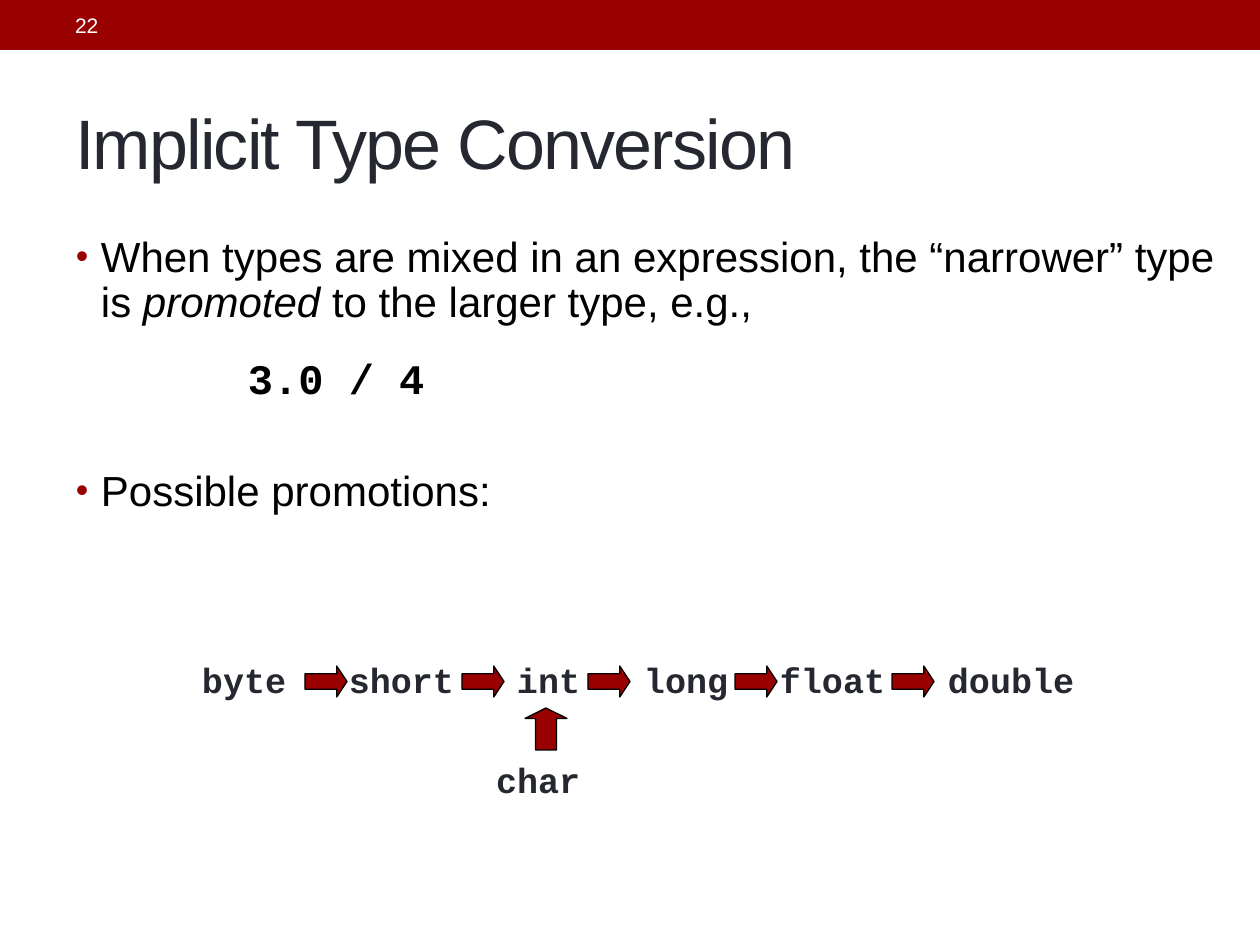
from pptx import Presentation
from pptx.dml.color import RGBColor
from pptx.enum.shapes import MSO_SHAPE as SHAPE
from pptx.enum.text import MSO_ANCHOR as ANCHOR, PP_ALIGN as ALIGN
from pptx.oxml.ns import qn
from pptx.util import Emu, Pt
from lxml import etree

RED = RGBColor(0x99, 0x00, 0x00)
INK = RGBColor(0x25, 0x27, 0x31)
BLACK = RGBColor(0, 0, 0)
WHITE = RGBColor(0xFF, 0xFF, 0xFF)
EMU_PER_PX = 914400 / 126

BODY = dict(name="Arial", size=Pt(24))
CODE = dict(name="Courier New", size=Pt(24), bold=True)
TYPE = dict(name="Courier New", size=Pt(20), bold=True)

TYPES = [("byte", 202), ("short", 349), ("int", 517),
         ("long", 644), ("float", 780), ("double", 948)]
PROMOTIONS = [305, 462, 588, 735, 892]


def px(n):
    return Emu(round(n * EMU_PER_PX))


def add_run(p, text, color, **fmt):
    r = p.add_run()
    r.text = text
    r.font.color.rgb = color
    for key, value in fmt.items():
        setattr(r.font, key, value)
    return r


def set_frame(tf, anchor=ANCHOR.TOP, inset=(12, 6)):
    x, y = map(px, inset)
    frame = dict(word_wrap=True, vertical_anchor=anchor, margin_left=x,
                 margin_right=x, margin_top=y, margin_bottom=y)
    for key, value in frame.items():
        setattr(tf, key, value)


def add_text(slide, box, **frame):
    tf = slide.shapes.add_textbox(*map(px, box)).text_frame
    set_frame(tf, **frame)
    return tf


def add_shape(slide, kind, box, line=None):
    sp = slide.shapes.add_shape(kind, *map(px, box))
    sp.shadow.inherit = False
    sp.fill.solid()
    sp.fill.fore_color.rgb = RED
    if line is None:
        sp.line.fill.background()
    else:
        sp.line.color.rgb = line
        sp.line.width = Pt(0.75)
    return sp


def add_arrow(slide, kind, box, head):
    sp = add_shape(slide, kind, box, BLACK)
    sp.adjustments[0] = 0.5
    sp.adjustments[1] = head


def set_bullet(p):
    pPr = p._p.get_or_add_pPr()
    pPr.set("marL", str(px(25)))
    pPr.set("indent", str(-px(25)))
    color = etree.SubElement(pPr, qn("a:buClr"))
    etree.SubElement(color, qn("a:srgbClr")).set("val", str(RED))
    etree.SubElement(pPr, qn("a:buSzPct")).set("val", "85000")
    etree.SubElement(pPr, qn("a:buFont")).set("typeface", "Arial")
    etree.SubElement(pPr, qn("a:buChar")).set("char", "•")


def add_header(slide):
    add_shape(slide, SHAPE.RECTANGLE, (0, 0, 1260, 50))
    tf = add_text(slide, (63, 3, 399, 45), anchor=ANCHOR.MIDDLE)
    add_run(tf.paragraphs[0], "22", WHITE, name="Arial", size=Pt(12))


def add_title(slide):
    title = slide.shapes.title
    title.left, title.top, title.width, title.height = map(px, (63, 73, 1134, 136))
    set_frame(title.text_frame, anchor=ANCHOR.MIDDLE)
    p = title.text_frame.paragraphs[0]
    p.alignment = ALIGN.LEFT
    r = add_run(p, "Implicit Type Conversion", INK, name="Arial", size=Pt(40))
    r.font._element.set("spc", "-100")


def add_body(slide):
    tf = add_text(slide, (64, 230, 1196, 674))
    rule, example, promotions = tf.paragraphs[0], tf.add_paragraph(), tf.add_paragraph()
    for p, before in ((rule, 2), (promotions, 38)):
        p.line_spacing = 0.9
        p.space_before = Pt(before)
        set_bullet(p)
    add_run(rule, "When types are mixed in an expression, the “narrower” type is ", BLACK, **BODY)
    add_run(rule, "promoted", BLACK, italic=True, **BODY)
    add_run(rule, " to the larger type, e.g.,", BLACK, **BODY)
    example.space_before = Pt(15)
    example._p.get_or_add_pPr().set("marL", str(px(172)))
    add_run(example, "3.0 / 4", BLACK, **CODE)
    add_run(promotions, "Possible promotions:", BLACK, **BODY)


def add_type(slide, name, left, top):
    tf = add_text(slide, (left, top, 21 * len(name) + 20, 40), inset=(0, 0))
    add_run(tf.paragraphs[0], name, INK, **TYPE)


def add_promotions(slide):
    for name, left in TYPES:
        add_type(slide, name, left, 659)
    add_type(slide, "char", 496, 759)
    for left in PROMOTIONS:
        add_arrow(slide, SHAPE.RIGHT_ARROW, (left, 666, 42, 31), 0.33)
    add_arrow(slide, SHAPE.UP_ARROW, (525, 708, 42, 42), 0.25)


def main():
    prs = Presentation()
    prs.slide_width, prs.slide_height = px(1260), px(945)
    slide = prs.slides.add_slide(prs.slide_layouts[5])
    add_header(slide)
    add_title(slide)
    add_body(slide)
    add_promotions(slide)
    prs.save("out.pptx")


if __name__ == "__main__":
    main()
